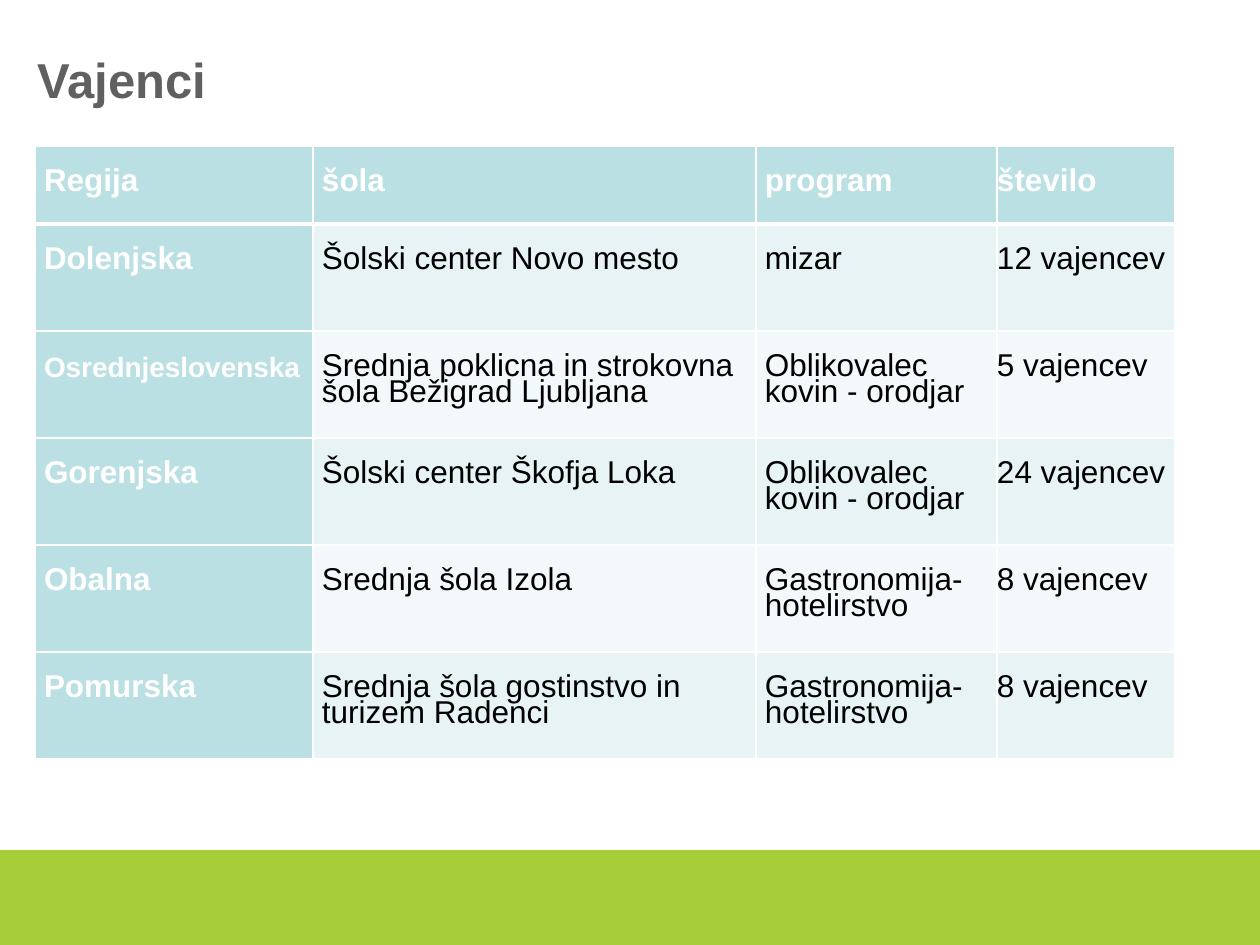
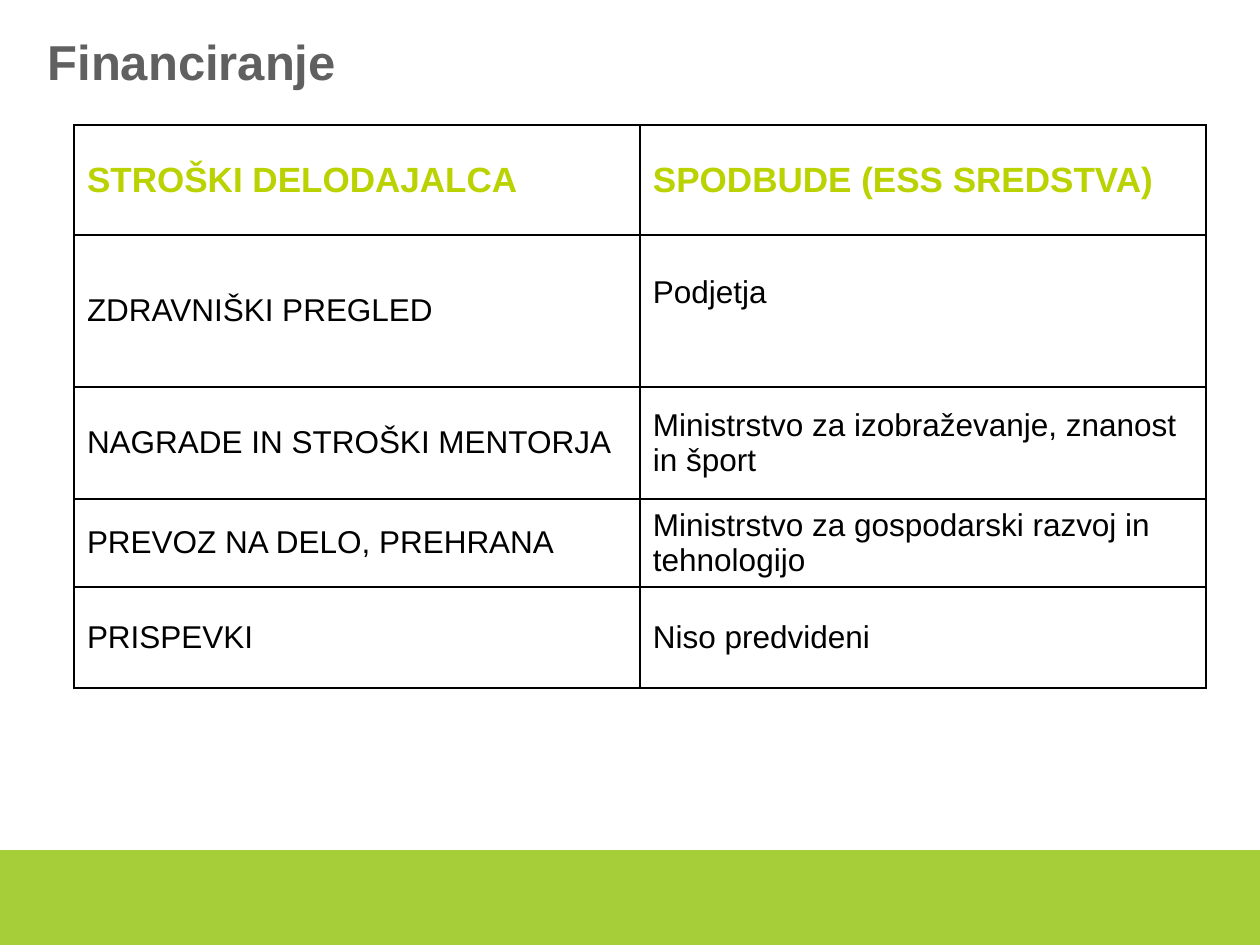
from lxml import etree
from pptx import Presentation
from pptx.dml.color import RGBColor
from pptx.enum.shapes import MSO_SHAPE
from pptx.enum.text import MSO_ANCHOR, MSO_AUTO_SIZE, PP_ALIGN
from pptx.oxml.ns import qn
from pptx.util import Pt

RECTANGLE = MSO_SHAPE.RECTANGLE
TOP, MIDDLE = MSO_ANCHOR.TOP, MSO_ANCHOR.MIDDLE
LEFT = PP_ALIGN.LEFT
NO_AUTOFIT = MSO_AUTO_SIZE.NONE

EMU_PER_PX = 914400 / 126
SLIDE_WIDTH, SLIDE_HEIGHT = 1260, 945
BAND_TOP = 850
TITLE_ONLY = 5
LINE_PITCH = 15  # points
COLORS = {
    "white": "FFFFFF", "black": "000000", "title": "606060",
    "band": "A6CE39", "heading": "B9D200",
    "teal": "BBE0E3", "odd_row": "E7F3F4", "even_row": "F3F9FA",
}
FORMATS = {
    "title": {"name": "Arial", "size": Pt(28), "bold": True},
    "heading": {"name": "Arial", "size": Pt(20), "bold": True},
    "label": {"name": "Arial", "size": Pt(18), "bold": True},
    "long_label": {"name": "Arial", "size": Pt(16), "bold": True},
    "body": {"name": "Arial", "size": Pt(18), "bold": False},
}


def px(length):
    return round(length * EMU_PER_PX)


def rgb(color):
    return RGBColor.from_string(COLORS[color])


class Deck:
    def __init__(self):
        self.presentation = Presentation()
        self.presentation.slide_width = px(SLIDE_WIDTH)
        self.presentation.slide_height = px(SLIDE_HEIGHT)
        self.slide = None

    def add_slide(self, title, left, top, width, height):
        """Start a slide with the shared band and title."""
        layout = self.presentation.slide_layouts[TITLE_ONLY]
        self.slide = self.presentation.slides.add_slide(layout)
        self.band()
        shape = self.slide.shapes.title
        box = {"left": left, "top": top, "width": width, "height": height}
        for name, value in box.items():
            setattr(shape, name, px(value))
        frame = shape.text_frame
        frame.auto_size = NO_AUTOFIT
        frame.vertical_anchor = MIDDLE
        self.set_text(frame, title, "title", "title")

    def band(self):
        shape = self.slide.shapes.add_shape(
            RECTANGLE, 0, px(BAND_TOP), px(SLIDE_WIDTH), px(SLIDE_HEIGHT - BAND_TOP))
        shape.shadow.inherit = False
        shape.fill.solid()
        shape.fill.fore_color.rgb = rgb("band")
        shape.line.fill.background()

    def set_text(self, frame, text, style, color):
        frame.text = text
        paragraph = frame.paragraphs[0]
        paragraph.alignment = LEFT
        for name, value in FORMATS[style].items():
            setattr(paragraph.runs[0].font, name, value)
        paragraph.runs[0].font.color.rgb = rgb(color)
        return paragraph

    def table(self, left, top, columns, rows):
        """Add a plain table with the given column widths and row heights."""
        table = self.slide.shapes.add_table(
            len(rows), len(columns), px(left), px(top),
            px(sum(columns)), px(sum(rows))).table
        table.first_row = table.horz_banding = False
        for column, width in zip(table.columns, columns):
            column.width = px(width)
        for row, height in zip(table.rows, rows):
            row.height = px(height)
        return table

    def cell(self, cell, text, style, color, fill, border, margins,
             anchor=MIDDLE, widths=(1, 1, 1, 1)):
        """Fill a cell; margins and border widths run left, top, right, bottom."""
        properties = cell._tc.get_or_add_tcPr()
        # The schema wants the sides in the order left, right, top, bottom
        for side, index in (("L", 0), ("R", 2), ("T", 1), ("B", 3)):
            line = etree.SubElement(
                properties, qn(f"a:ln{side}"), w=str(Pt(widths[index])))
            solid = etree.SubElement(line, qn("a:solidFill"))
            etree.SubElement(solid, qn("a:srgbClr"), val=COLORS[border])
        cell.fill.solid()
        cell.fill.fore_color.rgb = rgb(fill)
        cell.vertical_anchor = anchor
        for side, margin in zip(("left", "top", "right", "bottom"), margins):
            setattr(cell, f"margin_{side}", px(margin))
        return self.set_text(cell.text_frame, text, style, color)


def apprentices_slide(deck):
    deck.add_slide("Vajenci", 25, 0, 1149, 158)
    content = [
        ("Regija", "šola", "program", "število"),
        ("Dolenjska", "Šolski center Novo mesto", "mizar", "12 vajencev"),
        ("Osrednjeslovenska",
         "Srednja poklicna in strokovna šola Bežigrad Ljubljana",
         "Oblikovalec kovin - orodjar", "5 vajencev"),
        ("Gorenjska", "Šolski center Škofja Loka",
         "Oblikovalec kovin - orodjar", "24 vajencev"),
        ("Obalna", "Srednja šola Izola", "Gastronomija-hotelirstvo", "8 vajencev"),
        ("Pomurska", "Srednja šola gostinstvo in turizem Radenci",
         "Gastronomija-hotelirstvo", "8 vajencev"),
    ]
    table = deck.table(35, 146, [278, 443, 241, 178], [78] + [107] * 5)
    for row, texts in enumerate(content):
        widths = (1, 3 if row == 1 else 1, 1, 3 if row == 0 else 1)
        for column, text in enumerate(texts):
            is_label = row == 0 or column == 0
            if is_label:
                style = "long_label" if text == "Osrednjeslovenska" else "label"
                color, fill = "white", "teal"
            else:
                style, color = "body", "black"
                fill = "odd_row" if row % 2 else "even_row"
            side = 0 if column == 3 else 9
            paragraph = deck.cell(
                table.cell(row, column), text, style, color, fill, "white",
                (side, 26, side, 0), TOP, widths)
            paragraph.line_spacing = Pt(LINE_PITCH)


def financing_slide(deck):
    deck.add_slide("Financiranje", 35, 16, 1191, 90)
    content = [
        ("STROŠKI DELODAJALCA", "SPODBUDE (ESS SREDSTVA)"),
        ("ZDRAVNIŠKI PREGLED", "Podjetja"),
        ("NAGRADE IN STROŠKI MENTORJA",
         "Ministrstvo za izobraževanje, znanost in šport"),
        ("PREVOZ NA DELO, PREHRANA",
         "Ministrstvo za gospodarski razvoj in tehnologijo"),
        ("PRISPEVKI", "Niso predvideni"),
    ]
    table = deck.table(74, 125, [566, 566], [110, 152, 112, 88, 101])
    for row, texts in enumerate(content):
        style, color = ("body", "black") if row else ("heading", "heading")
        for column, text in enumerate(texts):
            # The first incentive sits above the middle of its row
            bottom = 42 if text == "Podjetja" else 6
            deck.cell(table.cell(row, column), text, style, color, "white",
                      "black", (13, 6, 13, bottom))


def main():
    deck = Deck()
    apprentices_slide(deck)
    financing_slide(deck)
    deck.presentation.save("out.pptx")


if __name__ == "__main__":
    main()
